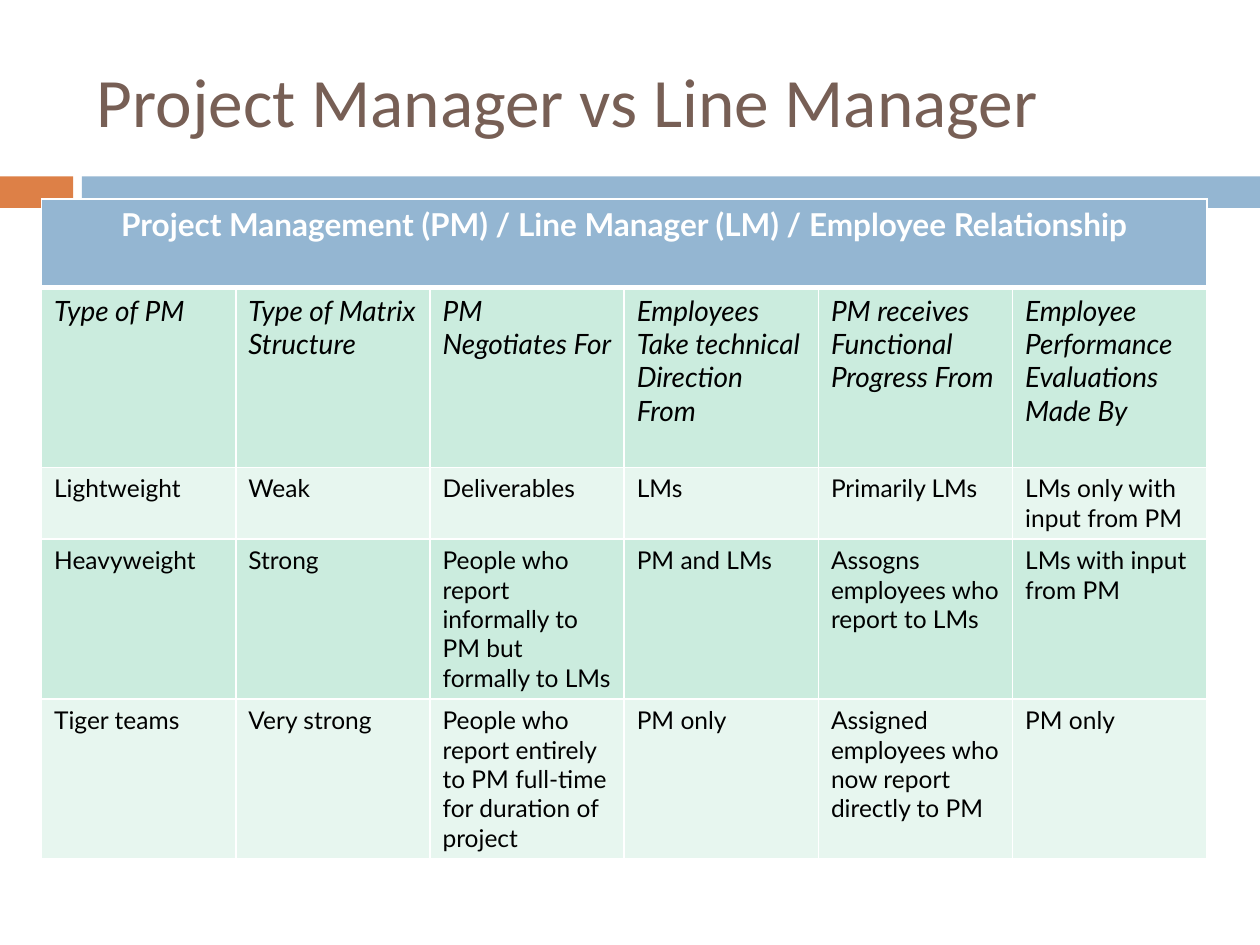
from lxml import etree
from pptx import Presentation
from pptx.dml.color import RGBColor
from pptx.enum.shapes import MSO_SHAPE
from pptx.enum.text import MSO_ANCHOR, PP_ALIGN
from pptx.oxml.ns import qn
from pptx.util import Inches, Pt

RECT = MSO_SHAPE.RECTANGLE
MIDDLE = MSO_ANCHOR.MIDDLE
CENTER = PP_ALIGN.CENTER
COLORS = {
    "title": "775F55", "orange": "DD8047", "blue": "94B6D2",
    "dark": "CBECDE", "light": "E7F6EF", "white": "FFFFFF", "black": "000000",
}
HEAD = "Project Management (PM) / Line Manager (LM) / Employee Relationship"
ROWS = [
    [HEAD],
    ["Type of PM", "Type of Matrix Structure", "PM Negotiates For",
     "Employees Take technical Direction From",
     "PM receives Functional Progress From",
     "Employee Performance Evaluations Made By"],
    ["Lightweight", "Weak", "Deliverables", "LMs", "Primarily LMs",
     "LMs only with input from PM"],
    ["Heavyweight", "Strong",
     "People who report informally to PM but formally to LMs",
     "PM and LMs", "Assogns employees who report to LMs",
     "LMs with input from PM"],
    ["Tiger teams", "Very strong",
     "People who report entirely to PM full-time for duration of project",
     "PM only", "Assigned employees who now report directly to PM",
     "PM only"],
]
HEIGHTS = [0.7, 1.43, 0.57, 1.27, 1.27]
FILLS = ["blue", "dark", "light", "dark", "light"]
SIZES = [18, 16, 14, 14, 14]


def add_run(para, text, font, size, color):
    run = para.add_run()
    run.text = text
    run.font.name = font
    run.font.size = Pt(size)
    run.font.color.rgb = RGBColor.from_string(COLORS[color])
    return run


def add_edges(cell, top, bottom):
    """Draw white cell borders; top and bottom are widths in points."""
    props = cell._tc.get_or_add_tcPr()
    for tag, width in (("lnL", 1), ("lnR", 1), ("lnT", top), ("lnB", bottom)):
        line = etree.SubElement(props, qn("a:" + tag), w=str(Pt(width)))
        fill = etree.SubElement(line, qn("a:solidFill"))
        etree.SubElement(fill, qn("a:srgbClr"), val=COLORS["white"])


prs = Presentation()
prs.slide_width, prs.slide_height = Inches(10), Inches(7.5)
slide = prs.slides.add_slide(prs.slide_layouts[6])

# Bars under the title
for left, width, color in ((0, 0.58, "orange"), (0.65, 9.35, "blue")):
    bar = slide.shapes.add_shape(RECT, Inches(left), Inches(1.4),
                                 Inches(width), Inches(0.25))
    bar.shadow.inherit = False
    bar.fill.solid()
    bar.fill.fore_color.rgb = RGBColor.from_string(COLORS[color])
    bar.line.fill.background()

# Title
box = slide.shapes.add_textbox(Inches(0.67), Inches(0.25),
                               Inches(8.92), Inches(1.08))
frame = box.text_frame
frame.word_wrap = True
frame.vertical_anchor = MIDDLE
add_run(frame.paragraphs[0], "Project Manager vs Line Manager",
        "Calibri", 39.6, "title")

# Table
table = slide.shapes.add_table(len(ROWS), 6, Inches(0.33), Inches(1.58),
                               Inches(9.25), Inches(sum(HEIGHTS))).table
for col in table.columns:
    col.width = Inches(9.25 / 6)
for r, texts in enumerate(ROWS):
    table.rows[r].height = Inches(HEIGHTS[r])
    for c in range(6):
        cell = table.cell(r, c)
        add_edges(cell, 3 if r == 1 else 1, 3 if r == 0 else 1)
        cell.fill.solid()
        cell.fill.fore_color.rgb = RGBColor.from_string(COLORS[FILLS[r]])
    for c, text in enumerate(texts):
        para = table.cell(r, c).text_frame.paragraphs[0]
        run = add_run(para, text, "Lato", SIZES[r],
                      "white" if r == 0 else "black")
        run.font.bold = r == 0
        run.font.italic = r == 1
table.cell(0, 0).merge(table.cell(0, 5))
table.cell(0, 0).text_frame.paragraphs[0].alignment = CENTER

prs.save("out.pptx")
